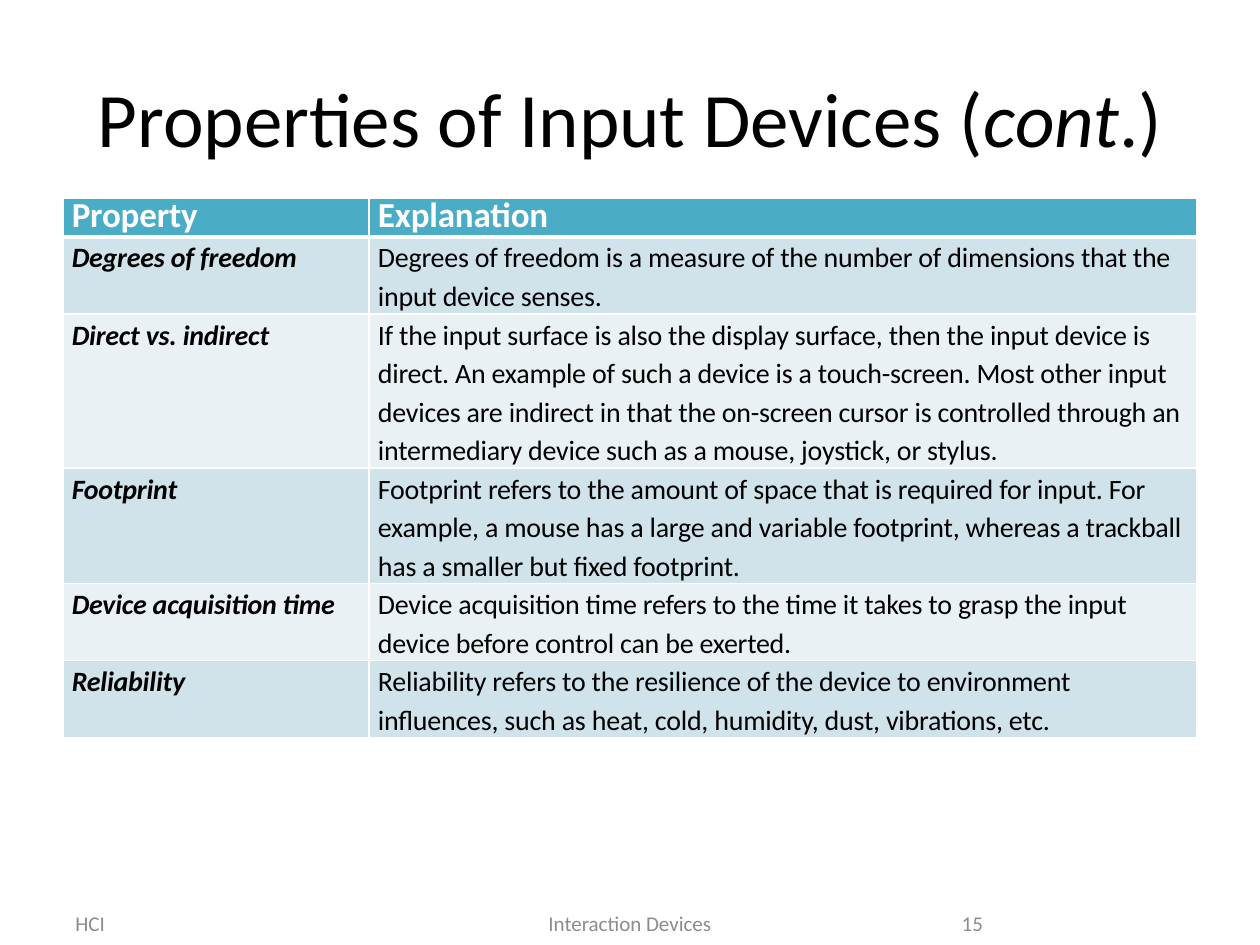
from dataclasses import dataclass
from lxml.etree import SubElement
from pptx import Presentation
from pptx.dml.color import RGBColor
from pptx.enum.text import MSO_ANCHOR, PP_ALIGN
from pptx.oxml.ns import qn
from pptx.util import Inches, Pt


@dataclass(frozen=True)
class Theme:
    font: str = "Calibri"
    ink: str = "000000"
    paper: str = "FFFFFF"
    muted: str = "8C8C8C"
    header: str = "4BACC6"
    bands: tuple = ("D0E3EA", "E9F1F5")
    title_size: int = 44
    header_size: int = 20
    body_size: int = 16
    footer_size: int = 12
    leading: int = 22
    tracking: str = "-10"
    rule: int = 1
    header_rule: int = 3


THEME = Theme()
WIDTH, HEIGHT = Inches(10), Inches(7.5)
MARGIN = WIDTH // 20
CONTENT = WIDTH - 2 * MARGIN
PROPERTY_SHARE = 0.27

TITLE = (("Properties of Input Devices (", False), ("cont", True), (".)", False))
HEADINGS = ("Property", "Explanation")
# Property, explanation, lines of text the row holds
PROPERTIES = (
    ("Degrees of freedom",
     "Degrees of freedom is a measure of the number of dimensions that the "
     "input device senses.", 2),
    ("Direct vs. indirect",
     "If the input surface is also the display surface, then the input device "
     "is direct. An example of such a device is a touch-screen. Most other "
     "input devices are indirect in that the on-screen cursor is controlled "
     "through an intermediary device such as a mouse, joystick, or stylus.", 4),
    ("Footprint",
     "Footprint refers to the amount of space that is required for input. For "
     "example, a mouse has a large and variable footprint, whereas a trackball "
     "has a smaller but fixed footprint.", 3),
    ("Device acquisition time",
     "Device acquisition time refers to the time it takes to grasp the input "
     "device before control can be exerted.", 2),
    ("Reliability",
     "Reliability refers to the resilience of the device to environment "
     "influences, such as heat, cold, humidity, dust, vibrations, etc.", 2),
)
# Text, left and width as shares of the slide, alignment
FOOTERS = (
    ("HCI", 0.05, 0.23, PP_ALIGN.LEFT),
    ("Interaction Devices", 0.34, 0.32, PP_ALIGN.CENTER),
    ("15", 0.72, 0.07, PP_ALIGN.RIGHT),
)


def style(run, size, color, bold=False, italic=False):
    font = run.font
    font.name, font.size = THEME.font, Pt(size)
    font.bold, font.italic = bold, italic
    font.color.rgb = RGBColor.from_string(color)


def add_line(slide, box, pieces, size, color, align):
    """Place one vertically centred paragraph of (text, italic) pieces."""
    frame = slide.shapes.add_textbox(*box).text_frame
    frame.word_wrap = True
    frame.vertical_anchor = MSO_ANCHOR.MIDDLE
    paragraph = frame.paragraphs[0]
    paragraph.alignment = align
    for text, italic in pieces:
        run = paragraph.add_run()
        run.text = text
        style(run, size, color, italic=italic)


def add_borders(cell, top, bottom):
    properties = cell._tc.get_or_add_tcPr()
    widths = {"L": THEME.rule, "R": THEME.rule, "T": top, "B": bottom}
    for side, width in widths.items():
        line = SubElement(properties, qn(f"a:ln{side}"), w=str(Pt(width)))
        fill = SubElement(line, qn("a:solidFill"))
        SubElement(fill, qn("a:srgbClr"), val=THEME.paper)


def fill_cell(cell, text, fill, rules, **run_style):
    cell.margin_left = cell.margin_right = Inches(0.07)
    cell.margin_top = cell.margin_bottom = 0
    add_borders(cell, *rules)
    cell.fill.solid()
    cell.fill.fore_color.rgb = RGBColor.from_string(fill)
    cell.text_frame.text = text
    paragraph = cell.text_frame.paragraphs[0]
    paragraph.line_spacing = Pt(THEME.leading)
    run = paragraph.runs[0]
    style(run, **run_style)
    run.font._element.set("spc", THEME.tracking)


def add_properties(slide, left, top, width):
    line_counts = [1] + [lines for *_, lines in PROPERTIES]
    row_heights = [Pt(THEME.leading * lines) for lines in line_counts]
    table = slide.shapes.add_table(
        len(row_heights), len(HEADINGS), left, top, width, sum(row_heights)
    ).table
    table.columns[0].width = int(width * PROPERTY_SHARE)
    table.columns[1].width = width - table.columns[0].width
    for row, height in zip(table.rows, row_heights):
        row.height = height

    for column, heading in enumerate(HEADINGS):
        fill_cell(table.cell(0, column), heading, THEME.header,
                  (THEME.rule, THEME.header_rule),
                  size=THEME.header_size, color=THEME.paper, bold=True)
    for row, (*texts, _) in enumerate(PROPERTIES, start=1):
        band = THEME.bands[(row - 1) % len(THEME.bands)]
        above = THEME.header_rule if row == 1 else THEME.rule
        for column, text in enumerate(texts):
            is_name = column == 0
            fill_cell(table.cell(row, column), text, band, (above, THEME.rule),
                      size=THEME.body_size, color=THEME.ink,
                      bold=is_name, italic=is_name)


def add_footers(slide, top, height):
    for text, left, width, align in FOOTERS:
        box = (int(WIDTH * left), top, int(WIDTH * width), height)
        add_line(slide, box, [(text, False)], THEME.footer_size, THEME.muted, align)


def main():
    presentation = Presentation()
    presentation.slide_width, presentation.slide_height = WIDTH, HEIGHT
    slide = presentation.slides.add_slide(presentation.slide_layouts[6])
    title_box = (MARGIN, int(HEIGHT * 0.04), CONTENT, HEIGHT // 6)
    add_line(slide, title_box, TITLE, THEME.title_size, THEME.ink, PP_ALIGN.CENTER)
    add_properties(slide, MARGIN, int(HEIGHT * 0.21), CONTENT)
    add_footers(slide, int(HEIGHT * 0.956), int(HEIGHT * 0.041))
    presentation.save("out.pptx")


if __name__ == "__main__":
    main()
